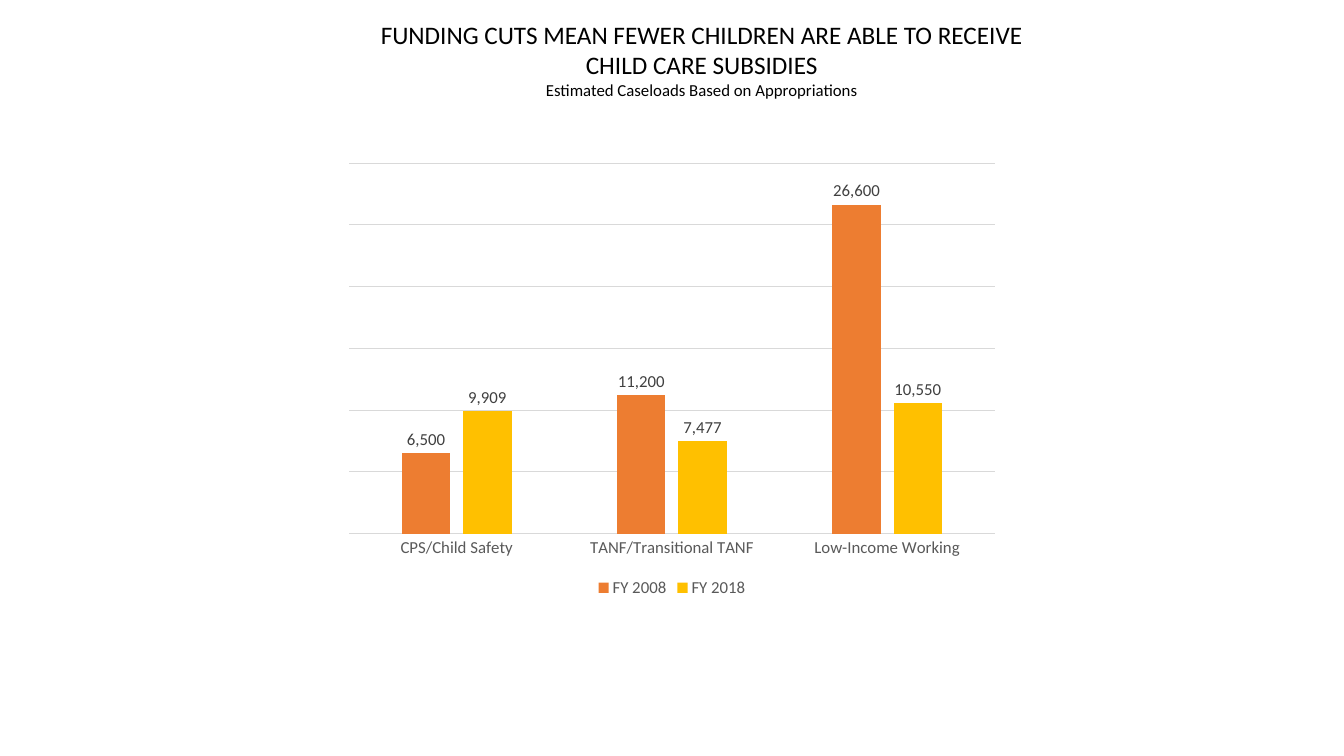
from dataclasses import dataclass

from pptx import Presentation
from pptx.chart.data import CategoryChartData
from pptx.dml.color import RGBColor
from pptx.enum.chart import XL_CHART_TYPE as ChartType
from pptx.enum.chart import XL_LABEL_POSITION as LabelPosition
from pptx.enum.chart import XL_LEGEND_POSITION as LegendPosition
from pptx.enum.chart import XL_TICK_MARK as TickMark
from pptx.enum.text import MSO_AUTO_SIZE as AutoSize
from pptx.enum.text import PP_ALIGN as Align
from pptx.util import Inches, Pt


@dataclass(frozen=True)
class Theme:
    font: str = "Calibri"
    title_size: int = 18
    body_size: int = 12
    text: str = "000000"
    axis_text: str = "595959"
    label_text: str = "404040"
    grid: str = "D9D9D9"
    series: tuple = ("ED7D31", "FFC000")


theme = Theme()


def style_font(font, size, color):
    font.name = theme.font
    font.size = Pt(size)
    font.bold = False
    font.color.rgb = RGBColor.from_string(color)


def style_line(line):
    line.color.rgb = RGBColor.from_string(theme.grid)
    line.width = Pt(0.75)


presentation = Presentation()
presentation.slide_width = Inches(13.33)
presentation.slide_height = Inches(7.5)
slide = presentation.slides.add_slide(presentation.slide_layouts[6])

caseloads = CategoryChartData(number_format="#,##0")
caseloads.categories = ["CPS/Child Safety", "TANF/Transitional TANF", "Low-Income Working"]
caseloads.add_series("FY 2008", (6500, 11200, 26600))
caseloads.add_series("FY 2018", (9909, 7477, 10550))

chart = slide.shapes.add_chart(
    ChartType.COLUMN_CLUSTERED,
    Inches(3.33), Inches(1.53), Inches(6.67), Inches(4.44),
    caseloads,
).chart
chart.has_title = False
style_font(chart.font, theme.body_size, theme.axis_text)

chart.has_legend = True
chart.legend.position = LegendPosition.BOTTOM
chart.legend.include_in_layout = False
style_font(chart.legend.font, theme.body_size, theme.axis_text)

category_axis = chart.category_axis
category_axis.major_tick_mark = TickMark.NONE
category_axis.minor_tick_mark = TickMark.NONE
style_line(category_axis.format.line)
style_font(category_axis.tick_labels.font, theme.body_size, theme.axis_text)

value_axis = chart.value_axis
value_axis.visible = False
value_axis.minimum_scale = 0
value_axis.maximum_scale = 30000
value_axis.major_unit = 5000
value_axis.has_major_gridlines = True
style_line(value_axis.major_gridlines.format.line)

plot = chart.plots[0]
plot.gap_width = 219
plot.overlap = -27
plot.vary_by_categories = False

for series, color in zip(plot.series, theme.series):
    series.format.fill.solid()
    series.format.fill.fore_color.rgb = RGBColor.from_string(color)
    labels = series.data_labels
    labels.show_value = True
    labels.position = LabelPosition.OUTSIDE_END
    labels.number_format = "#,##0"
    labels.number_format_is_linked = False
    style_font(labels.font, theme.body_size, theme.label_text)

heading = slide.shapes.add_textbox(Inches(3.5), Inches(0.14), Inches(6.92), Inches(0.91))
text_frame = heading.text_frame
text_frame.word_wrap = True
text_frame.auto_size = AutoSize.SHAPE_TO_FIT_TEXT
text_frame.text = (
    "FUNDING CUTS MEAN FEWER CHILDREN ARE ABLE TO RECEIVE CHILD CARE SUBSIDIES\n"
    "Estimated Caseloads Based on Appropriations"
)
for paragraph, size in zip(text_frame.paragraphs, (theme.title_size, theme.body_size)):
    paragraph.alignment = Align.CENTER
    style_font(paragraph.runs[0].font, size, theme.text)

presentation.save("out.pptx")
